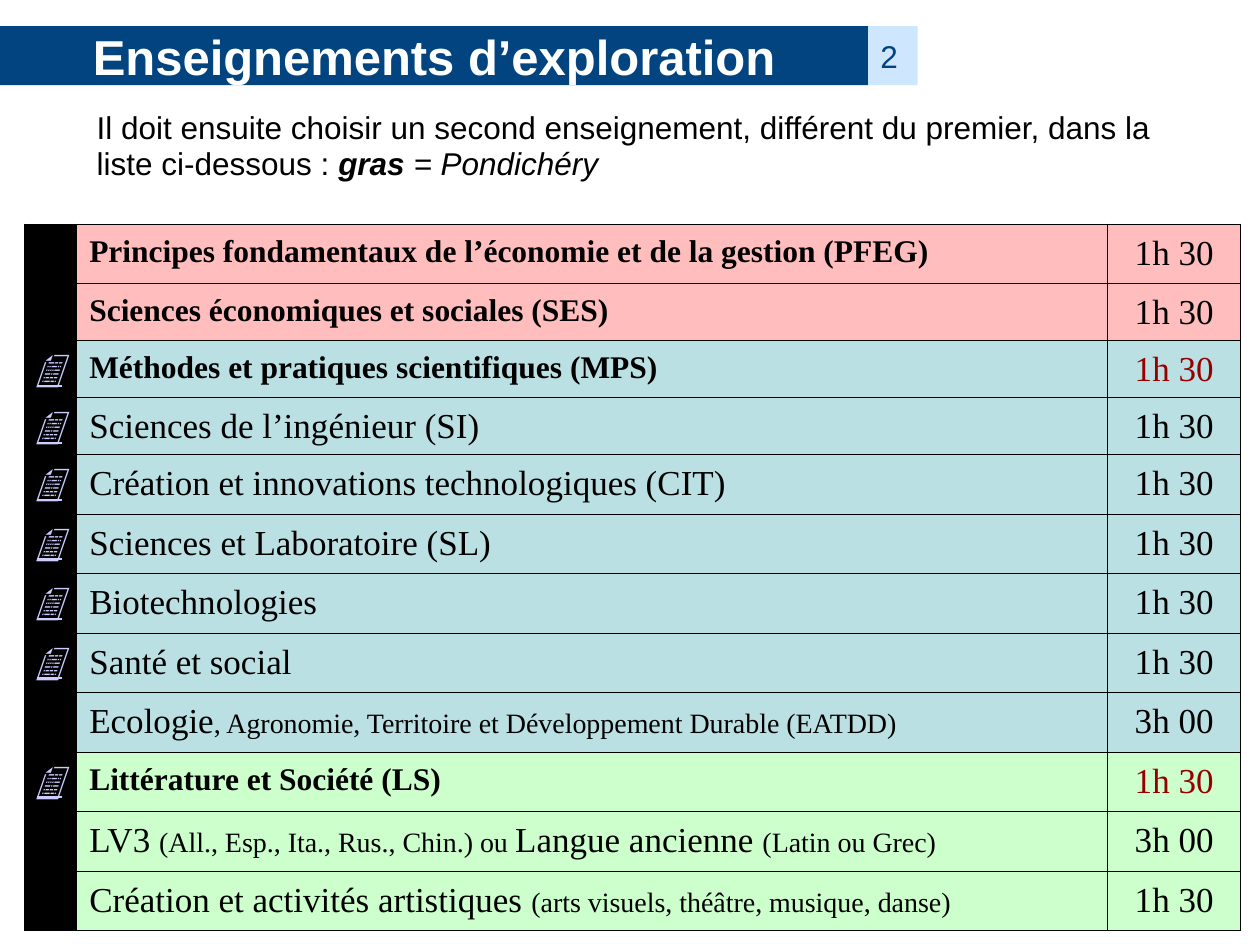
import pptx
import pptx.dml.color
import pptx.enum.shapes
import pptx.enum.text
import pptx.oxml
import pptx.oxml.ns
import pptx.util
from pptx.util import Cm

ALIGN = pptx.enum.text.PP_ALIGN
ANCHOR = pptx.enum.text.MSO_ANCHOR
SERIF = "Times New Roman"
BLACK, NAVY, RED = "000000", "024480", "960000"
PINK, BLUE, GREEN = "FFBDBD", "BBE0E3", "CCFFCC"
COLUMN_WIDTHS = (1.05, 20.78, 2.68)
SHORT_ROWS = (1, 2, 3)

# Each course: fill, has a document icon, hours, hours colour, name spans (text, size, bold)
COURSES = [
    (PINK, False, "1h 30", BLACK,
     [("Principes fondamentaux de l’économie et de la gestion (PFEG)", 18, True)]),
    (PINK, False, "1h 30", BLACK, [("Sciences économiques et sociales (SES)", 18, True)]),
    (BLUE, True, "1h 30", RED, [("Méthodes et pratiques scientifiques (MPS)", 18, True)]),
    (BLUE, True, "1h 30", BLACK, [("Sciences de l’ingénieur (SI)", 20, False)]),
    (BLUE, True, "1h 30", BLACK, [("Création et innovations technologiques (CIT)", 20, False)]),
    (BLUE, True, "1h 30", BLACK, [("Sciences et Laboratoire (SL)", 20, False)]),
    (BLUE, True, "1h 30", BLACK, [("Biotechnologies", 20, False)]),
    (BLUE, True, "1h 30", BLACK, [("Santé et social", 20, False)]),
    (BLUE, False, "3h 00", BLACK,
     [("Ecologie", 20, False),
      (", Agronomie, Territoire et Développement Durable (EATDD)", 16, False)]),
    (GREEN, True, "1h 30", RED, [("Littérature et Société (LS)", 18, True)]),
    (GREEN, False, "3h 00", BLACK,
     [("LV3 ", 20, False), ("(All., Esp., Ita., Rus., Chin.) ou ", 16, False),
      ("Langue ancienne ", 20, False), ("(Latin ou Grec)", 16, False)]),
    (GREEN, False, "1h 30", BLACK,
     [("Création et activités artistiques ", 20, False),
      ("(arts visuels, théâtre, musique, danse)", 16, False)]),
]


def color(value):
    """Return the colour for a hex string."""
    return pptx.dml.color.RGBColor.from_string(value)


def add_span(para, text, size, ink, face="Arial", bold=False, italic=False, underline=False):
    """Append one formatted run to a paragraph."""
    span = para.add_run()
    span.text = text
    span.font.name = face
    span.font.size = pptx.util.Pt(size)
    span.font.color.rgb = color(ink)
    span.font.bold = bold
    span.font.italic = italic
    span.font.underline = underline


def add_bar(page, left, width, fill, text, size, ink, align, bold=False):
    """Draw one filled block of the header bar with its text."""
    box = page.shapes.add_shape(pptx.enum.shapes.MSO_SHAPE.RECTANGLE,
                                Cm(left), Cm(0.53), Cm(width), Cm(1.19))
    box.shadow.inherit = False
    box.fill.solid()
    box.fill.fore_color.rgb = color(fill)
    box.line.fill.background()
    box.text_frame.word_wrap = True
    box.text_frame.vertical_anchor = ANCHOR.MIDDLE
    para = box.text_frame.paragraphs[0]
    para.alignment = align
    add_span(para, text, size, ink, bold=bold)


def add_intro(page):
    """Write the introduction above the table."""
    box = page.shapes.add_textbox(Cm(1.7), Cm(2.13), Cm(22.4), Cm(1.68))
    box.text_frame.word_wrap = True
    para = box.text_frame.paragraphs[0]
    para.line_spacing = 0.93
    add_span(para, "Il doit ensuite choisir un second enseignement, différent du premier, "
                   "dans la liste ci-dessous : ", 18, BLACK)
    add_span(para, "gras", 18, BLACK, bold=True, italic=True)
    add_span(para, " = Pondichéry", 18, BLACK, italic=True)


def style_cell(cell, fill, top=0.28):
    """Give a cell thin black borders, a fill and margins."""
    properties = cell._tc.get_or_add_tcPr()
    for side in ("lnL", "lnR", "lnT", "lnB"):
        properties.append(pptx.oxml.parse_xml(
            f'<a:{side} {pptx.oxml.ns.nsdecls("a")} w="9525"><a:solidFill>'
            f'<a:srgbClr val="{BLACK}"/></a:solidFill></a:{side}>'))
    cell.fill.solid()
    cell.fill.fore_color.rgb = color(fill)
    cell.margin_left = cell.margin_right = Cm(0.25)
    cell.margin_top, cell.margin_bottom = Cm(top), Cm(0.13)


def cell_para(cell, spacing=0.87, align=ALIGN.LEFT):
    """Return the paragraph of a cell, ready for spans."""
    para = cell.text_frame.paragraphs[0]
    para.line_spacing = spacing
    para.alignment = align
    return para


def add_courses(page):
    """Build the table of courses and weekly hours."""
    heights = [1.14 if row in SHORT_ROWS else 1.2 for row in range(len(COURSES))]
    table = page.shapes.add_table(len(COURSES), len(COLUMN_WIDTHS), Cm(0.5), Cm(4.52),
                                  Cm(sum(COLUMN_WIDTHS)), Cm(sum(heights))).table
    table.first_row = table.horz_banding = False
    for column, width in zip(table.columns, COLUMN_WIDTHS):
        column.width = Cm(width)
    for row, height, course in zip(table.rows, heights, COURSES):
        row.height = Cm(height)
        fill, has_icon, hours, hours_ink, name = course
        icon_cell, name_cell, hours_cell = row.cells
        style_cell(icon_cell, BLACK, 0.3 if has_icon else 0.13)
        style_cell(name_cell, fill)
        style_cell(hours_cell, fill)
        if has_icon:
            add_span(cell_para(icon_cell, 0.84), "📄", 20, "CCCCFF",
                     italic=True, underline=True)
        para = cell_para(name_cell)
        for text, size, bold in name:
            add_span(para, text, size, BLACK, SERIF, bold)
        add_span(cell_para(hours_cell, align=ALIGN.CENTER), hours, 20, hours_ink, SERIF)


def main():
    """Build and save the deck."""
    deck = pptx.Presentation()
    deck.slide_width, deck.slide_height = Cm(25.4), Cm(19.05)
    page = deck.slides.add_slide(deck.slide_layouts[6])
    add_bar(page, 0, 17.5, NAVY, "Enseignements d’exploration", 28, "FFFFFF",
            ALIGN.CENTER, bold=True)
    add_intro(page)
    add_bar(page, 17.5, 1, "CEE7FE", "2", 18, NAVY, ALIGN.LEFT)
    add_courses(page)
    deck.save("out.pptx")


if __name__ == "__main__":
    main()
